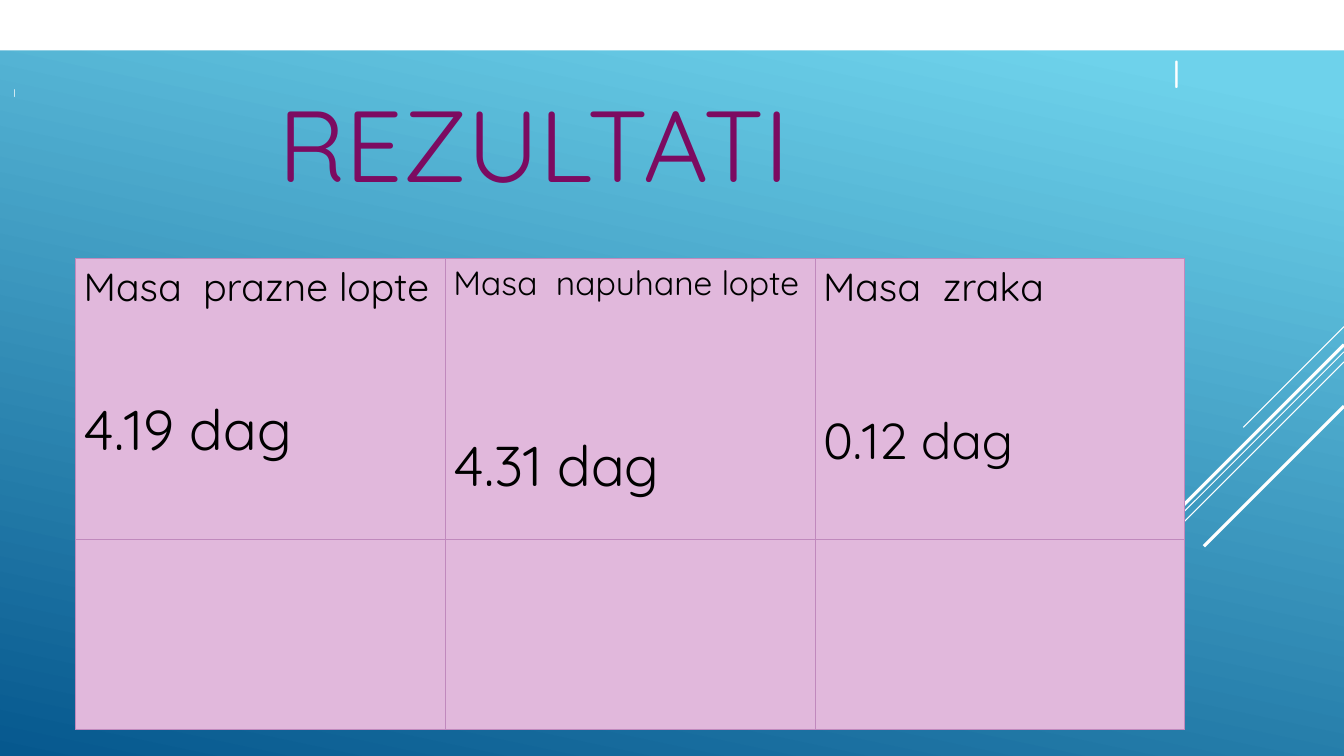
from dataclasses import dataclass

from lxml import etree
from pptx import Presentation
from pptx.dml.color import RGBColor
from pptx.enum.shapes import MSO_CONNECTOR, MSO_SHAPE
from pptx.enum.text import MSO_ANCHOR
from pptx.oxml.ns import qn
from pptx.util import Inches, Pt


@dataclass(frozen=True)
class Theme:
    font: str = "Quicksand"
    sky: str = "6ED2EB"
    deep: str = "06588E"
    white: str = "FFFFFF"
    plum: str = "7C0B61"
    ink: str = "000000"
    cell: str = "E1B8DC"
    border: str = "C089BD"
    title_size: int = 72
    mark_size: int = 28
    small_mark_size: int = 8


THEME = Theme()
SLIDE_W, SLIDE_H = 13.33, 7.5

# Content
TITLE = "REZULTATI"
MARK = "I"
# heading, heading size, value, value size, gap before the value in points
RESULTS = [
    ("Masa  prazne lopte", 28, "4.19 dag", 40, 60),
    ("Masa  napuhane lopte", 24, "4.31 dag", 40, 90),
    ("Masa  zraka", 28, "0.12 dag", 36, 70),
]
ROW_HEIGHTS = [2.79, 1.89]
TABLE_LEFT, TABLE_TOP, TABLE_W = 0.75, 2.56, 11
# top at the right slide edge, horizontal run, weight in points
DIAGONALS = [
    (3.24, 1.0, 0.75),
    (3.49, 3.26, 0.75),
    (3.59, 2.07, 0.75),
    (3.42, 1.91, 2.25),
    (4.03, 1.39, 2.25),
]


def rgb(value):
    return RGBColor.from_string(value)


def style(paragraph, size, color):
    for run in paragraph.runs:
        run.font.name = THEME.font
        run.font.size = Pt(size)
        run.font.color.rgb = rgb(color)


def add_label(slide, text, box, size, color, anchor, inset, wrap):
    frame = slide.shapes.add_textbox(*map(Inches, box)).text_frame
    frame.word_wrap = wrap
    frame.vertical_anchor = anchor
    frame.margin_left = frame.margin_right = Inches(inset[0])
    frame.margin_top = frame.margin_bottom = Inches(inset[1])
    frame.text = text
    style(frame.paragraphs[0], size, color)


def add_diagonal(slide, top, run, weight):
    line = slide.shapes.add_connector(
        MSO_CONNECTOR.STRAIGHT, Inches(SLIDE_W), Inches(top),
        Inches(SLIDE_W - run), Inches(top + run))
    line.line.color.rgb = rgb(THEME.white)
    line.line.width = Pt(weight)
    etree.SubElement(line._element.spPr, qn("a:effectLst"))


def set_borders(cell):
    props = cell._tc.get_or_add_tcPr()
    for index, side in enumerate(("lnL", "lnR", "lnT", "lnB")):
        edge = etree.Element(qn(f"a:{side}"), w=str(Pt(0.75)))
        fill = etree.SubElement(edge, qn("a:solidFill"))
        color = etree.SubElement(fill, qn("a:srgbClr"), val=THEME.border)
        etree.SubElement(color, qn("a:alpha"), val="60000")
        props.insert(index, edge)


def add_results(slide):
    table = slide.shapes.add_table(
        len(ROW_HEIGHTS), len(RESULTS), Inches(TABLE_LEFT), Inches(TABLE_TOP),
        Inches(TABLE_W), Inches(sum(ROW_HEIGHTS))).table
    table.first_row = table.horz_banding = False
    for row, height in zip(table.rows, ROW_HEIGHTS):
        row.height = Inches(height)
    for cell in table.iter_cells():
        cell.fill.solid()
        cell.fill.fore_color.rgb = rgb(THEME.cell)
        cell.margin_left = cell.margin_right = Inches(0.08)
        cell.margin_top = cell.margin_bottom = Inches(0.04)
        set_borders(cell)
    for column, (heading, heading_size, value, value_size, gap) in enumerate(RESULTS):
        frame = table.cell(0, column).text_frame
        frame.text = f"{heading}\n{value}"
        heading_line, value_line = frame.paragraphs
        style(heading_line, heading_size, THEME.ink)
        style(value_line, value_size, THEME.ink)
        value_line.space_before = Pt(gap)


def main():
    deck = Presentation()
    deck.slide_width, deck.slide_height = Inches(SLIDE_W), Inches(SLIDE_H)
    slide = deck.slides.add_slide(deck.slide_layouts[6])

    # Background
    backdrop = slide.background.fill
    backdrop.gradient()
    backdrop.gradient_angle = 258
    for stop, position, color in zip(
            backdrop.gradient_stops, (0.1, 1), (THEME.sky, THEME.deep)):
        stop.position = position
        stop.color.rgb = rgb(color)

    # Diagonal lines on the right edge
    for diagonal in DIAGONALS:
        add_diagonal(slide, *diagonal)

    # Title and the two small marks
    add_label(slide, TITLE, (2.66, 0.33, 8, 2.16), THEME.title_size,
              THEME.plum, MSO_ANCHOR.MIDDLE, (0.1, 0.05), True)
    add_label(slide, MARK, (0.12, 0.83, 0.05, 0.16), THEME.small_mark_size,
              THEME.white, MSO_ANCHOR.BOTTOM, (0.01, 0), False)
    add_label(slide, MARK, (11.59, 0.75, 0.16, 0.23), THEME.mark_size,
              THEME.white, MSO_ANCHOR.BOTTOM, (0.03, 0.02), False)

    # Results table
    add_results(slide)

    # White band along the top
    band = slide.shapes.add_shape(
        MSO_SHAPE.RECTANGLE, 0, 0, Inches(SLIDE_W), Inches(0.5))
    band.shadow.inherit = False
    band.fill.solid()
    band.fill.fore_color.rgb = rgb(THEME.white)
    band.line.fill.background()

    deck.save("out.pptx")


if __name__ == "__main__":
    main()
